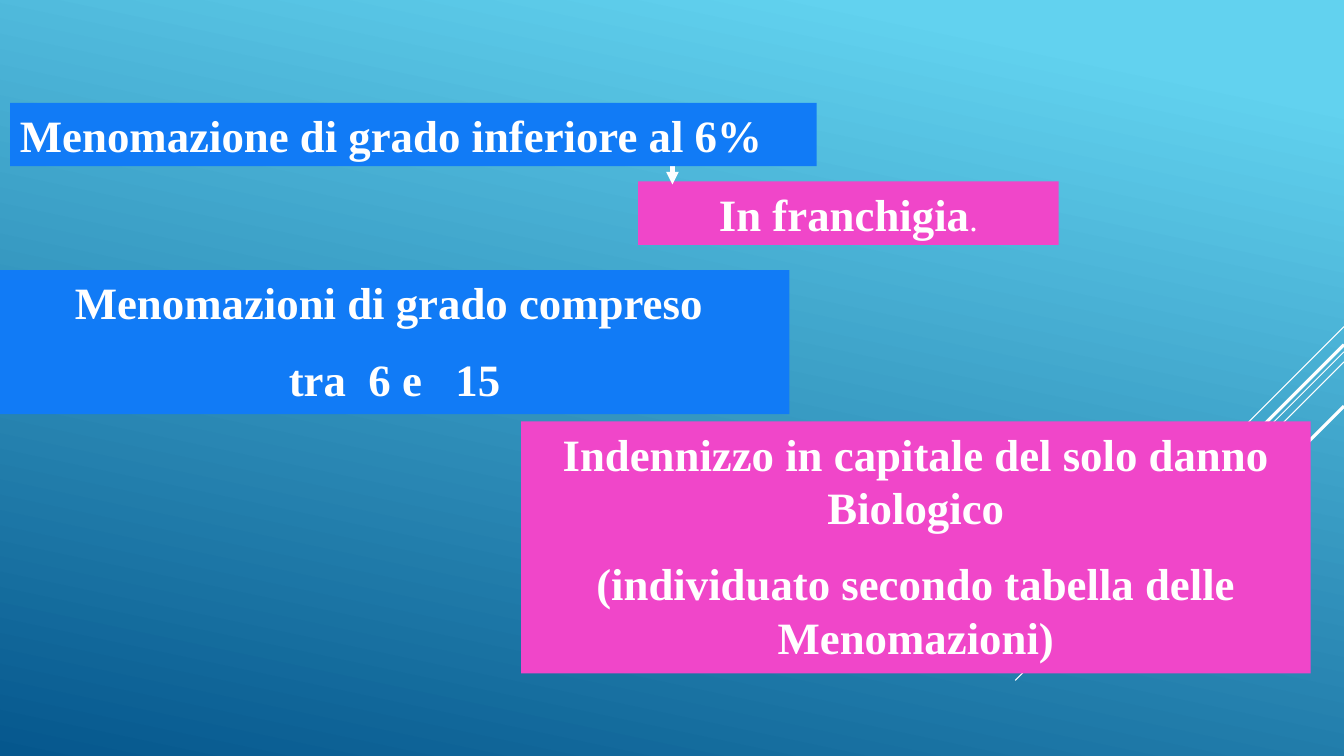
from lxml.etree import SubElement
from pptx import Presentation
from pptx.dml.color import RGBColor
from pptx.enum.shapes import MSO_CONNECTOR, MSO_SHAPE
from pptx.enum.text import MSO_ANCHOR, PP_ALIGN
from pptx.oxml.ns import qn
from pptx.util import Inches, Pt

WIDTH, HEIGHT = 13.33, 7.5
WHITE, BLUE, PINK = "FFFFFF", "117BF6", "F046C9"
SKY, DEEP = "62D2EF", "05578D"
FONT = "Times New Roman"

# Diagonals run down from the right edge: start height, run, line width
DIAGONALS = [(3.24, 1, 0.75), (3.49, 3.26, 0.75), (3.59, 2.07, 0.75),
             (3.42, 1.91, 2.25), (4.03, 1.39, 2.25)]

# Left, top, width, height, fill, alignment, paragraphs of (text, size, bold)
OUTCOMES = [
    (6.33, 1.8, 4.17, 0.63, PINK, PP_ALIGN.CENTER,
     [[("In franchigia", 32, True), (".", 24, False)]]),
    (0, 2.68, 7.83, 1.43, BLUE, PP_ALIGN.CENTER,
     [[("Menomazioni di grado compreso ", 32, True)],
      [("tra  6 e   15", 32, True)]]),
    (5.17, 4.18, 7.83, 2.5, PINK, PP_ALIGN.CENTER,
     [[("Indennizzo in capitale del solo danno Biologico", 32, True)],
      [("(individuato secondo tabella delle Menomazioni)", 32, True)]]),
]
ARROW = (6.67, 1.17, 6.67, 1.83)
LOW_GRADE = (0.1, 1.02, 8, 0.63, BLUE, PP_ALIGN.LEFT,
             [[("Menomazione di grado inferiore al 6%", 32, True)]])


def color(value):
    return RGBColor.from_string(value)


def paint_background(page):
    fill = page.background.fill
    fill.gradient()
    fill.gradient_angle = 360 - 102
    for stop, (position, value) in zip(fill.gradient_stops,
                                       [(0.1, SKY), (1, DEEP)]):
        stop.position = position
        stop.color.rgb = color(value)


def add_line(page, left, top, right, bottom, width):
    line = page.shapes.add_connector(
        MSO_CONNECTOR.STRAIGHT, *map(Inches, (left, top, right, bottom)))
    line.line.color.rgb = color(WHITE)
    line.line.width = Pt(width)
    SubElement(line._element.spPr, qn("a:effectLst"))
    return line


def add_box(page, left, top, width, height, fill, alignment, paragraphs):
    box = page.shapes.add_shape(
        MSO_SHAPE.RECTANGLE, *map(Inches, (left, top, width, height)))
    box.shadow.inherit = False
    box.fill.solid()
    box.fill.fore_color.rgb = color(fill)
    box.line.fill.background()
    frame = box.text_frame
    frame.word_wrap = True
    frame.vertical_anchor = MSO_ANCHOR.TOP
    for index, spans in enumerate(paragraphs):
        para = frame.add_paragraph() if index else frame.paragraphs[0]
        para.alignment = alignment
        para.space_before = Pt(16 if index else 0)
        for text, size, bold in spans:
            span = para.add_run()
            span.text = text
            span.font.name = FONT
            span.font.size = Pt(size)
            span.font.bold = bold
            span.font.color.rgb = color(WHITE)


def main():
    deck = Presentation()
    deck.slide_width, deck.slide_height = Inches(WIDTH), Inches(HEIGHT)
    page = deck.slides.add_slide(deck.slide_layouts[6])
    paint_background(page)
    for top, run, width in DIAGONALS:
        add_line(page, WIDTH, top, WIDTH - run, top + run, width)
    for outcome in OUTCOMES:
        add_box(page, *outcome)
    arrow = add_line(page, *ARROW, 3)
    SubElement(arrow.line._get_or_add_ln(), qn("a:tailEnd"), type="triangle")
    add_box(page, *LOW_GRADE)
    deck.save("out.pptx")


if __name__ == "__main__":
    main()
